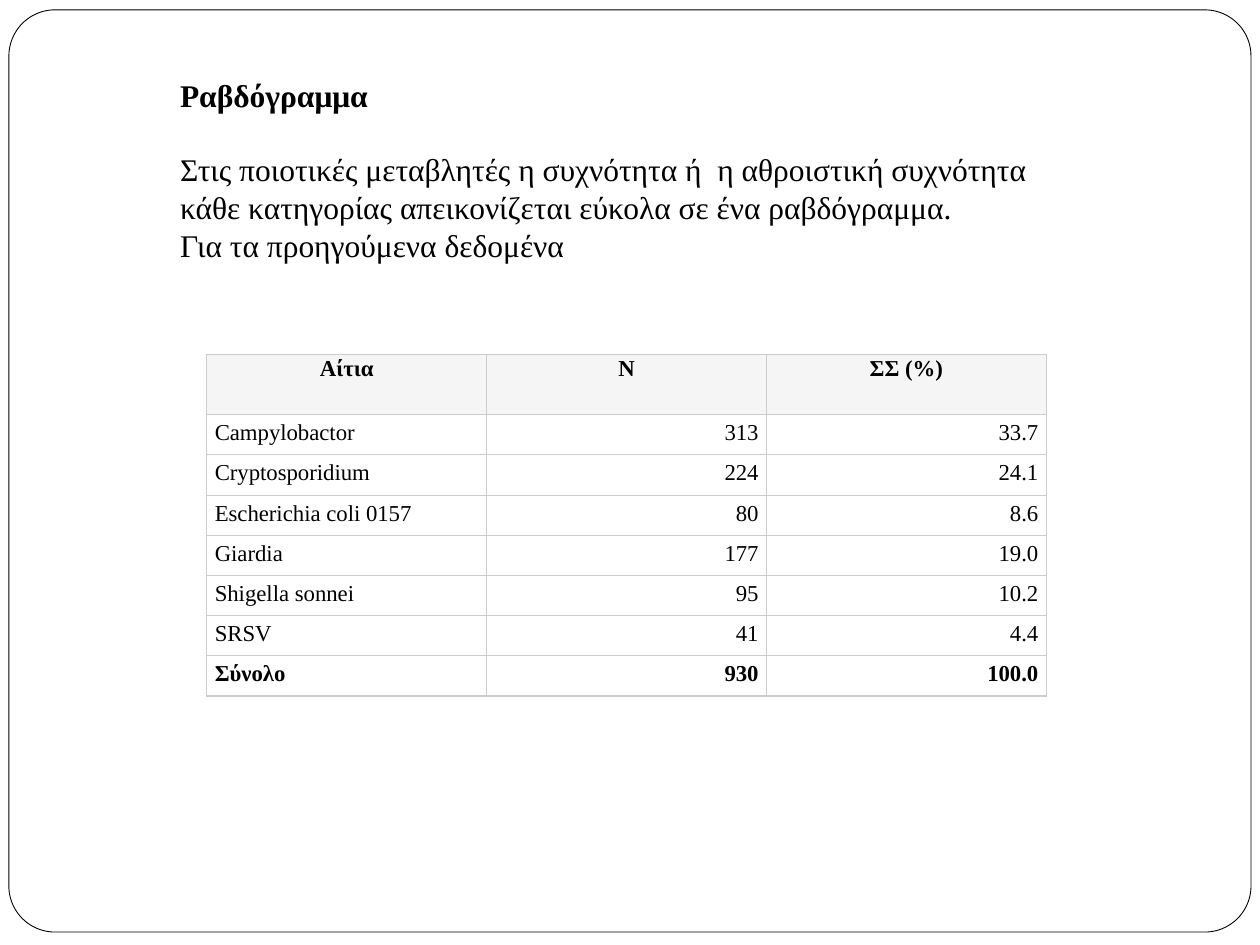
from dataclasses import dataclass

from lxml.etree import SubElement
from pptx import Presentation
from pptx.dml.color import RGBColor
from pptx.enum.shapes import MSO_SHAPE
from pptx.enum.text import PP_ALIGN
from pptx.oxml.ns import qn
from pptx.util import Cm, Pt

BLACK = RGBColor(0x00, 0x00, 0x00)
WHITE = RGBColor(0xFF, 0xFF, 0xFF)
HEADER_GREY = RGBColor(0xF5, 0xF5, 0xF5)
BORDER_GREY = RGBColor(0xCC, 0xCC, 0xCC)
FONT = "Times New Roman"


@dataclass(frozen=True)
class Line:
    text: str
    bold: bool = False
    space_after: float = 0


@dataclass(frozen=True)
class RowStyle:
    height: float
    fill: RGBColor
    bold: bool
    aligns: tuple
    inset_x: float
    inset_y: float


LINES = [
    Line("Ραβδόγραμμα", bold=True, space_after=21),
    Line("Στις ποιοτικές μεταβλητές η συχνότητα ή  η αθροιστική συχνότητα "
         "κάθε κατηγορίας απεικονίζεται εύκολα σε ένα ραβδόγραμμα."),
    Line("Για τα προηγούμενα δεδομένα"),
]

BODY_ALIGNS = (PP_ALIGN.LEFT, PP_ALIGN.RIGHT, PP_ALIGN.RIGHT)
HEADER = RowStyle(1.22, HEADER_GREY, True, (PP_ALIGN.CENTER,) * 3, 0.05, 0.05)
BODY = RowStyle(0.81, WHITE, False, BODY_ALIGNS, 0.16, 0.12)
TOTAL = RowStyle(0.81, WHITE, True, BODY_ALIGNS, 0.16, 0.12)

ROWS = [
    (HEADER, ("Αίτια", "Ν", "ΣΣ (%)")),
    (BODY, ("Campylobactor", "313", "33.7")),
    (BODY, ("Cryptosporidium", "224", "24.1")),
    (BODY, ("Escherichia coli 0157", "80", "8.6")),
    (BODY, ("Giardia", "177", "19.0")),
    (BODY, ("Shigella sonnei", "95", "10.2")),
    (BODY, ("SRSV", "41", "4.4")),
    (TOTAL, ("Σύνολο", "930", "100.0")),
]
COLUMN_WIDTH = 5.64


def set_attrs(obj, values: dict) -> None:
    for name, value in values.items():
        setattr(obj, name, value)


def add_run(p, text: str, size: float, bold: bool) -> None:
    r = p.add_run()
    r.text = text
    set_attrs(r.font, {"name": FONT, "size": Pt(size), "bold": bold})
    r.font.color.rgb = BLACK


def add_frame(s) -> None:
    sp = s.shapes.add_shape(MSO_SHAPE.ROUNDED_RECTANGLE,
                            Cm(0.18), Cm(0.2), Cm(25.04), Cm(18.59))
    sp.adjustments[0] = 0.05
    sp.shadow.inherit = False
    sp.fill.solid()
    sp.fill.fore_color.rgb = WHITE
    sp.line.color.rgb = BLACK
    sp.line.width = Pt(0.5)


def add_intro(s) -> None:
    tf = s.shapes.add_textbox(Cm(3.38), Cm(1.4), Cm(18.47), Cm(5.64)).text_frame
    tf.word_wrap = True
    for i, line in enumerate(LINES):
        p = tf.add_paragraph() if i else tf.paragraphs[0]
        p.space_after = Pt(line.space_after)
        add_run(p, line.text, 18, line.bold)


def set_borders(cell) -> None:
    """Draw all four sides; the lines must precede the fill in tcPr."""
    tc_pr = cell._tc.get_or_add_tcPr()
    for i, side in enumerate(("a:lnL", "a:lnR", "a:lnT", "a:lnB")):
        ln = SubElement(tc_pr, qn(side), w=str(Pt(0.75)))
        fill = SubElement(ln, qn("a:solidFill"))
        SubElement(fill, qn("a:srgbClr"), val=str(BORDER_GREY))
        tc_pr.insert(i, ln)


def fill_cell(cell, text: str, style: RowStyle, align: PP_ALIGN) -> None:
    x, y = Cm(style.inset_x), Cm(style.inset_y)
    set_attrs(cell, {"margin_left": x, "margin_right": x,
                     "margin_top": y, "margin_bottom": y})
    cell.fill.solid()
    cell.fill.fore_color.rgb = style.fill
    set_borders(cell)
    p = cell.text_frame.paragraphs[0]
    p.alignment = align
    add_run(p, text, 13, style.bold)


def add_causes_table(s) -> None:
    n_cols = len(ROWS[0][1])
    height = sum(style.height for style, _ in ROWS)
    table = s.shapes.add_table(len(ROWS), n_cols, Cm(4.17), Cm(7.14),
                               Cm(COLUMN_WIDTH * n_cols), Cm(height)).table
    for column in table.columns:
        column.width = Cm(COLUMN_WIDTH)
    for row, (style, texts) in zip(table.rows, ROWS):
        row.height = Cm(style.height)
        for cell, text, align in zip(row.cells, texts, style.aligns):
            fill_cell(cell, text, style, align)


def main() -> None:
    prs = Presentation()
    set_attrs(prs, {"slide_width": Cm(25.4), "slide_height": Cm(19.05)})
    s = prs.slides.add_slide(prs.slide_layouts[6])
    add_frame(s)
    add_intro(s)
    add_causes_table(s)
    prs.save("out.pptx")


if __name__ == "__main__":
    main()
